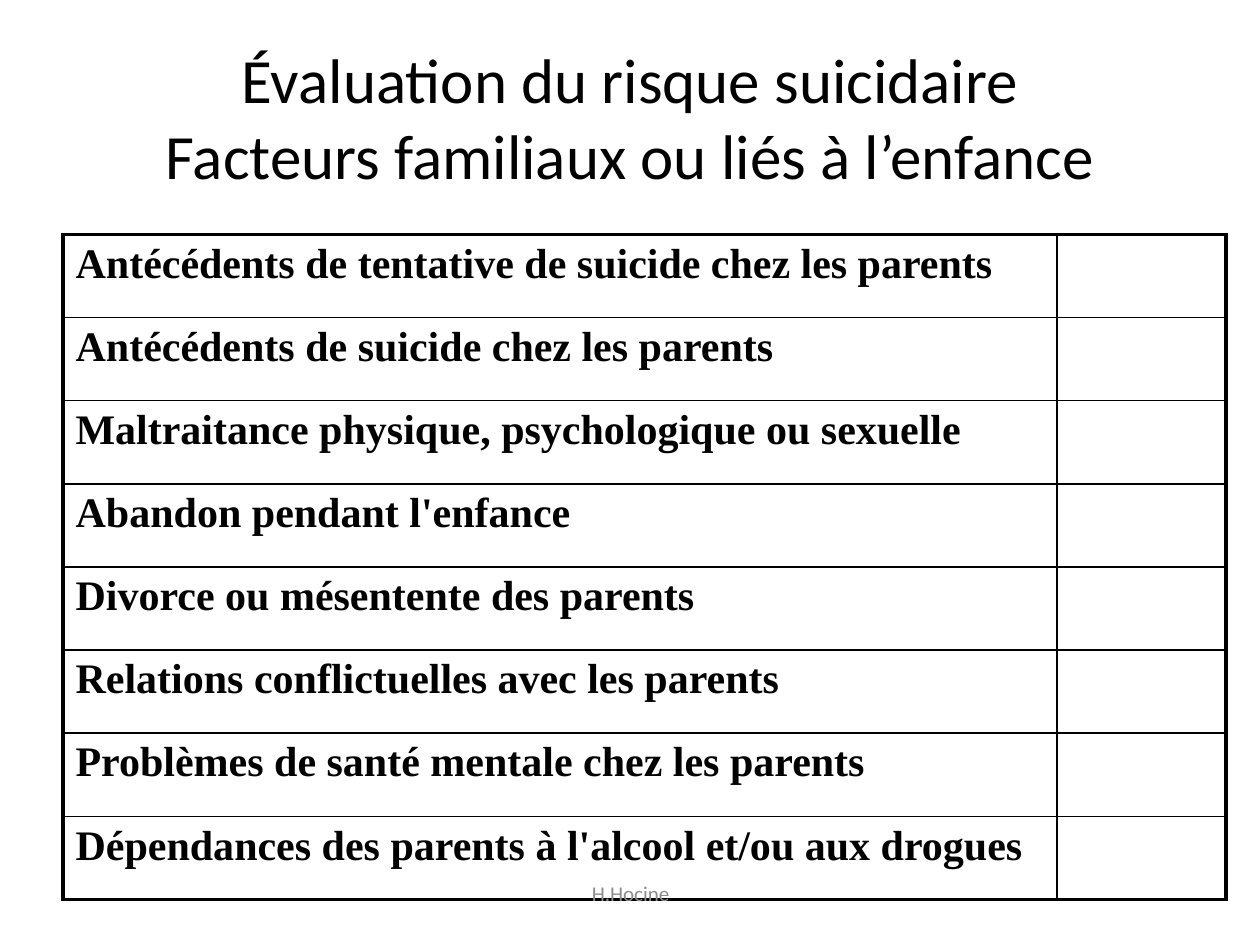
"""Build a slide with a checklist table of family-related suicide risk factors."""
from dataclasses import dataclass

from lxml.etree import SubElement
from pptx import Presentation
from pptx.dml.color import RGBColor as Color
from pptx.enum.text import MSO_ANCHOR as Anchor, PP_ALIGN as Align
from pptx.oxml.ns import qn
from pptx.util import Inches, Pt

TITLE_LINES = ["Évaluation du risque suicidaire", "Facteurs familiaux ou liés à l’enfance"]
RISK_FACTORS = [
    "Antécédents de tentative de suicide chez les parents",
    "Antécédents de suicide chez les parents",
    "Maltraitance physique, psychologique ou sexuelle",
    "Abandon pendant l'enfance",
    "Divorce ou mésentente des parents",
    "Relations conflictuelles avec les parents",
    "Problèmes de santé mentale chez les parents",
    "Dépendances des parents à l'alcool et/ou aux drogues",
]
FOOTER = "H.Hocine"

TITLE_BOX = (0.5, 0.3, 9, 1.25)
FOOTER_BOX = (3.42, 6.83, 3.17, 0.52)
TABLE_LEFT, TABLE_TOP = 0.5, 1.86
COLUMN_WIDTHS = (7.89, 1.34)
ROW_HEIGHT = 0.66
HANGING_INDENT = 0.58


@dataclass(frozen=True)
class Theme:
    heading_font: str = "Calibri"
    table_font: str = "Times New Roman"
    ink: str = "000000"
    muted: str = "8C8C8C"
    title_size: float = 36
    table_size: float = 24
    footer_size: float = 12
    outer_line: float = 2.25
    inner_line: float = 1


THEME = Theme()


def add_run(paragraph, text, font, size, color, bold=False):
    run = paragraph.add_run()
    run.text = text
    run.font.name = font
    run.font.size = Pt(size)
    run.font.bold = bold
    run.font.color.rgb = Color.from_string(color)


def add_centred_text(slide, box, lines, size, color):
    frame = slide.shapes.add_textbox(*map(Inches, box)).text_frame
    frame.word_wrap = True
    frame.vertical_anchor = Anchor.MIDDLE
    paragraph = frame.paragraphs[0]
    paragraph.alignment = Align.CENTER
    for index, line in enumerate(lines):
        if index:
            paragraph.add_line_break()
        add_run(paragraph, line, THEME.heading_font, size, color)


def set_borders(cell, outer_sides):
    properties = cell._tc.get_or_add_tcPr()
    for position, side in enumerate("LRTB"):
        width = THEME.outer_line if side in outer_sides else THEME.inner_line
        line = SubElement(properties, qn(f"a:ln{side}"), w=str(Pt(width)))
        fill = SubElement(line, qn("a:solidFill"))
        SubElement(fill, qn("a:srgbClr"), val=THEME.ink)
        properties.insert(position, line)


def add_checklist(slide):
    rows, columns = len(RISK_FACTORS), len(COLUMN_WIDTHS)
    area = (TABLE_LEFT, TABLE_TOP, sum(COLUMN_WIDTHS), rows * ROW_HEIGHT)
    table = slide.shapes.add_table(rows, columns, *map(Inches, area)).table
    table.first_row = table.horz_banding = False
    for column, width in zip(table.columns, COLUMN_WIDTHS):
        column.width = Inches(width)
    for row_index, factor in enumerate(RISK_FACTORS):
        table.rows[row_index].height = Inches(ROW_HEIGHT)
        for column_index in range(columns):
            cell = table.cell(row_index, column_index)
            cell.fill.background()
            edges = {"L": column_index == 0, "R": column_index == columns - 1,
                     "T": row_index == 0, "B": row_index == rows - 1}
            set_borders(cell, [side for side, is_edge in edges.items() if is_edge])
        paragraph = table.cell(row_index, 0).text_frame.paragraphs[0]
        indents = paragraph._p.get_or_add_pPr()
        indents.set("marL", str(Inches(HANGING_INDENT)))
        indents.set("indent", str(-Inches(HANGING_INDENT)))
        add_run(paragraph, factor, THEME.table_font, THEME.table_size, THEME.ink, bold=True)


def main():
    presentation = Presentation()
    presentation.slide_width, presentation.slide_height = Inches(10), Inches(7.5)
    slide = presentation.slides.add_slide(presentation.slide_layouts[6])
    add_centred_text(slide, TITLE_BOX, TITLE_LINES, THEME.title_size, THEME.ink)
    add_checklist(slide)
    add_centred_text(slide, FOOTER_BOX, [FOOTER], THEME.footer_size, THEME.muted)
    presentation.save("out.pptx")


if __name__ == "__main__":
    main()
